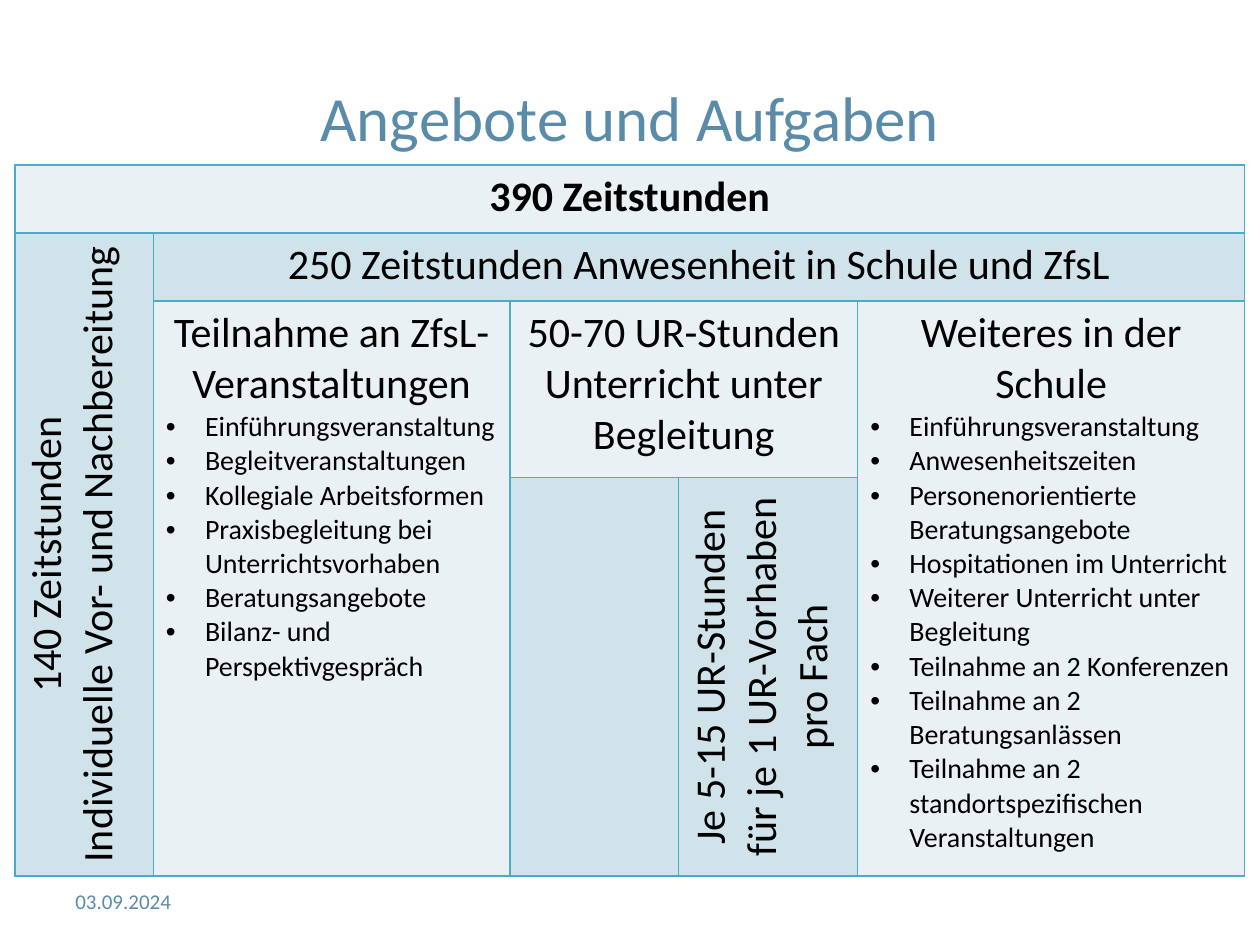
from dataclasses import dataclass
from typing import Any

from lxml.etree import SubElement
from pptx import Presentation
from pptx.dml.color import RGBColor
from pptx.enum.text import MSO_ANCHOR, PP_ALIGN
from pptx.oxml.ns import qn
from pptx.util import Cm, Pt

PALE, TINT, ACCENT, BORDER, BLACK = "E9F1F5", "D0E3EA", "5A8CAA", "4BACC6", "000000"
COLUMN_WIDTHS = (2.79, 7.19, 3.4, 3.61, 7.8)
ROW_HEIGHTS = (1.37, 1.37, 3.56, 8.03)
HEADING = {"name": "Calibri", "size": Pt(24), "bold": False}
TOTAL = HEADING | {"bold": True}
ITEM = HEADING | {"size": Pt(16)}
TITLE = HEADING | {"size": Pt(36)}
DATE = HEADING | {"size": Pt(12)}


@dataclass(frozen=True)
class Block:
    row: int
    column: int
    heading: str = ""
    items: tuple[str, ...] = ()
    fill: str = PALE
    rows: int = 1
    columns: int = 1
    vertical: bool = False
    style: Any = None


BLOCKS = (
    Block(0, 0, "390 Zeitstunden", columns=5, style=TOTAL),
    Block(1, 0, "140 Zeitstunden\vIndividuelle Vor- und Nachbereitung",
          fill=TINT, rows=3, vertical=True),
    Block(1, 1, "250 Zeitstunden Anwesenheit in Schule und ZfsL", fill=TINT, columns=4),
    Block(2, 1, "Teilnahme an ZfsL-Veranstaltungen", (
        "Einführungsveranstaltung",
        "Begleitveranstaltungen",
        "Kollegiale Arbeitsformen",
        "Praxisbegleitung bei Unterrichtsvorhaben",
        "Beratungsangebote",
        "Bilanz- und Perspektivgespräch",
    ), rows=2),
    Block(2, 2, "50-70 UR-Stunden\vUnterricht unter Begleitung", columns=2),
    Block(2, 4, "Weiteres in der Schule", (
        "Einführungsveranstaltung",
        "Anwesenheitszeiten",
        "Personenorientierte Beratungsangebote",
        "Hospitationen im Unterricht",
        "Weiterer Unterricht unter Begleitung",
        "Teilnahme an 2 Konferenzen",
        "Teilnahme an 2 Beratungsanlässen",
        "Teilnahme an 2 standortspezifischen Veranstaltungen",
    ), rows=2),
    Block(3, 2, fill=TINT),
    Block(3, 3, "Je 5-15 UR-Stunden\vfür je 1 UR-Vorhaben\vpro Fach",
          fill=TINT, vertical=True),
)


def colour(value: str) -> RGBColor:
    return RGBColor.from_string(value)


def write(para: Any, text: str, style: dict, ink: str, align: Any) -> None:
    para.text = text
    para.alignment = align
    for span in para.runs:
        for key, value in style.items():
            setattr(span.font, key, value)
        span.font.color.rgb = colour(ink)


def add_text(page: Any, place: tuple, text: str, style: dict, align: Any) -> None:
    box = page.shapes.add_textbox(*(Cm(length) for length in place))
    box.text_frame.word_wrap = True
    box.text_frame.vertical_anchor = MSO_ANCHOR.MIDDLE
    write(box.text_frame.paragraphs[0], text, style, ACCENT, align)


def add_bullet(para: Any) -> None:
    properties = para._p.get_or_add_pPr()
    properties.set("marL", str(Cm(0.79)))
    properties.set("indent", str(-Cm(0.79)))
    SubElement(properties, qn("a:buFont")).set("typeface", "Arial")
    SubElement(properties, qn("a:buChar")).set("char", "•")


def outline(cell: Any) -> None:
    properties = cell._tc.get_or_add_tcPr()
    for side in ("L", "R", "T", "B"):
        line = SubElement(properties, qn(f"a:ln{side}"), w=str(Pt(1)))
        solid = SubElement(line, qn("a:solidFill"))
        SubElement(solid, qn("a:srgbClr")).set("val", BORDER)


def fill_block(table: Any, block: Block) -> None:
    cell = table.cell(block.row, block.column)
    last_row = block.row + block.rows - 1
    last_column = block.column + block.columns - 1
    if (last_row, last_column) != (block.row, block.column):
        cell.merge(table.cell(last_row, last_column))
    for row in range(block.row, last_row + 1):
        for column in range(block.column, last_column + 1):
            part = table.cell(row, column)
            outline(part)
            part.fill.solid()
            part.fill.fore_color.rgb = colour(block.fill)
    if block.vertical:
        cell._tc.get_or_add_tcPr().set("vert", "vert270")
    if block.heading:
        write(cell.text_frame.paragraphs[0], block.heading, block.style or HEADING,
              BLACK, PP_ALIGN.CENTER)
    for item in block.items:
        para = cell.text_frame.add_paragraph()
        add_bullet(para)
        write(para, item, ITEM, BLACK, PP_ALIGN.LEFT)


def add_hours_table(page: Any) -> None:
    table = page.shapes.add_table(
        len(ROW_HEIGHTS), len(COLUMN_WIDTHS), Cm(0.3), Cm(3.33),
        Cm(sum(COLUMN_WIDTHS)), Cm(sum(ROW_HEIGHTS))).table
    table.first_row = table.horz_banding = False
    for column, width in zip(table.columns, COLUMN_WIDTHS):
        column.width = Cm(width)
    for row, height in zip(table.rows, ROW_HEIGHTS):
        row.height = Cm(height)
    for block in BLOCKS:
        fill_block(table, block)


def main() -> None:
    deck = Presentation()
    deck.slide_width, deck.slide_height = Cm(25.4), Cm(19.05)
    page = deck.slides.add_slide(deck.slide_layouts[6])
    add_text(page, (1.27, 0.76, 22.86, 3.18), "Angebote und Aufgaben", TITLE, PP_ALIGN.CENTER)
    add_text(page, (1.27, 17.66, 5.93, 1.01), "03.09.2024", DATE, PP_ALIGN.LEFT)
    add_hours_table(page)
    deck.save("out.pptx")


if __name__ == "__main__":
    main()
